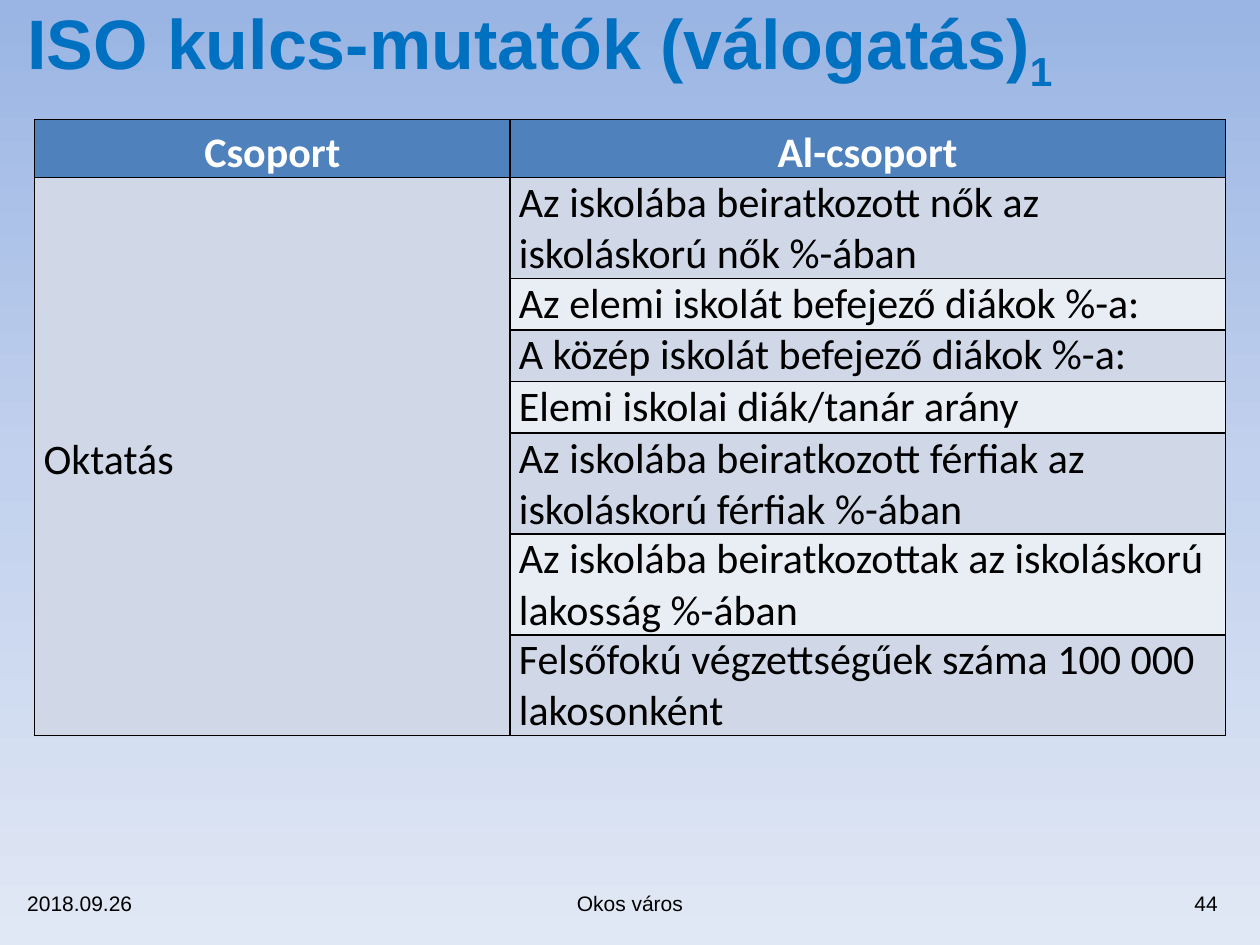
from copy import deepcopy

from lxml import etree
from pptx import Presentation
from pptx import util as u
from pptx.dml.color import RGBColor
from pptx.enum import text
from pptx.oxml import ns

BLUE = RGBColor(0x00, 0x70, 0xC0)
HEAD = RGBColor(0x4F, 0x81, 0xBD)
BANDS = RGBColor(0xD0, 0xD8, 0xE8), RGBColor(0xE9, 0xED, 0xF4)
BLACK = RGBColor(0, 0, 0)
WHITE = RGBColor(0xFF, 0xFF, 0xFF)
SKY = (
    (0, RGBColor(0x9A, 0xB5, 0xE4)),
    (0.5, RGBColor(0xC2, 0xD1, 0xED)),
    (1, RGBColor(0xE1, 0xE8, 0xF5)),
)
LEFT, MID, RIGHT = text.PP_ALIGN.LEFT, text.PP_ALIGN.CENTER, text.PP_ALIGN.RIGHT

ITEMS = (
    "Az iskolába beiratkozott nők az iskoláskorú nők %-ában",
    "Az elemi iskolát befejező diákok %-a:",
    "A közép iskolát befejező diákok %-a:",
    "Elemi iskolai diák/tanár arány",
    "Az iskolába beiratkozott férfiak az iskoláskorú férfiak %-ában",
    "Az iskolába beiratkozottak az iskoláskorú lakosság %-ában",
    "Felsőfokú végzettségűek száma 100 000 lakosonként",
)


class Page:
    """Holds the slide and the style of its parts."""

    def __init__(self, slide):
        self.slide = slide
        self.sans = "Arial"
        self.grid = "Calibri"

    def back(self, stops):
        fill = self.slide.background.fill
        fill.gradient()
        fill.gradient_angle = 270
        row = self.slide.element.find(".//" + ns.qn("a:gsLst"))
        row.append(deepcopy(row[0]))
        for stop, (pos, color) in zip(fill.gradient_stops, stops):
            stop.position = pos
            stop.color.rgb = color

    def run(self, para, words, font, size, color, bold=False, base=0):
        run = para.add_run()
        run.text = words
        run.font.name = font
        run.font.size = u.Pt(size)
        run.font.bold = bold
        run.font.color.rgb = color
        if base:
            run.font._element.set("baseline", str(base * 1000))

    def label(self, box, runs, size, color, align=LEFT, bold=False):
        frame = self.slide.shapes.add_textbox(*map(u.Cm, box)).text_frame
        frame.word_wrap = True
        frame.vertical_anchor = text.MSO_ANCHOR.MIDDLE
        para = frame.paragraphs[0]
        para.alignment = align
        for words, base in runs:
            self.run(para, words, self.sans, size, color, bold, base)

    def edge(self, cell):
        props = cell._tc.get_or_add_tcPr()
        for side in ("lnL", "lnR", "lnT", "lnB"):
            line = etree.SubElement(props, ns.qn("a:" + side), w=str(u.Pt(1)))
            fill = etree.SubElement(line, ns.qn("a:solidFill"))
            etree.SubElement(fill, ns.qn("a:srgbClr"), val=str(BLACK))

    def cell(self, cell, words, fill, color=BLACK, align=LEFT, bold=False, lead=1.0):
        cell.margin_left = cell.margin_right = u.Cm(0.18)
        cell.margin_top = cell.margin_bottom = 0
        self.edge(cell)
        cell.fill.solid()
        cell.fill.fore_color.rgb = fill
        para = cell.text_frame.paragraphs[0]
        para.alignment = align
        para.line_spacing = lead
        if words:
            self.run(para, words, self.grid, 24, color, bold)

    def table(self, left, top, cols, high, heads, group, items):
        count = len(items) + 1
        table = self.slide.shapes.add_table(
            count, len(cols), u.Cm(left), u.Cm(top),
            u.Cm(sum(cols)), u.Cm(high * count)).table
        for col, wide in zip(table.columns, cols):
            col.width = u.Cm(wide)
        for i, head in enumerate(heads):
            self.cell(table.cell(0, i), head, HEAD, WHITE, MID, True, 1.15)
        for i, item in enumerate(items):
            self.cell(table.cell(i + 1, 0), "" if i else group, BANDS[0], lead=1.15)
            self.cell(table.cell(i + 1, 1), item, BANDS[i % 2])
        first = table.cell(1, 0)
        first.merge(table.cell(count - 1, 0))
        first.vertical_anchor = text.MSO_ANCHOR.MIDDLE


def main():
    deck = Presentation()
    deck.slide_width, deck.slide_height = u.Cm(25.4), u.Cm(19.05)
    page = Page(deck.slides.add_slide(deck.slide_layouts[6]))
    page.back(SKY)

    # Title
    page.label((0.3, 0.2, 24.8, 1.5),
               (("ISO kulcs-mutatók (válogatás)", 0), ("1", -25)),
               40, BLUE, bold=True)

    # Indicator table
    page.table(0.7, 2.41, (9.58, 14.42), 1.04,
               ("Csoport", "Al-csoport"), "Oktatás", ITEMS)

    # Footer
    for left, wide, words, align in (
        (0.3, 5, "2018.09.26", LEFT),
        (8.7, 8, "Okos város", MID),
        (19.8, 5, "44", RIGHT),
    ):
        page.label((left, 17.7, wide, 1), ((words, 0),), 12, BLACK, align)

    deck.save("out.pptx")


if __name__ == "__main__":
    main()
